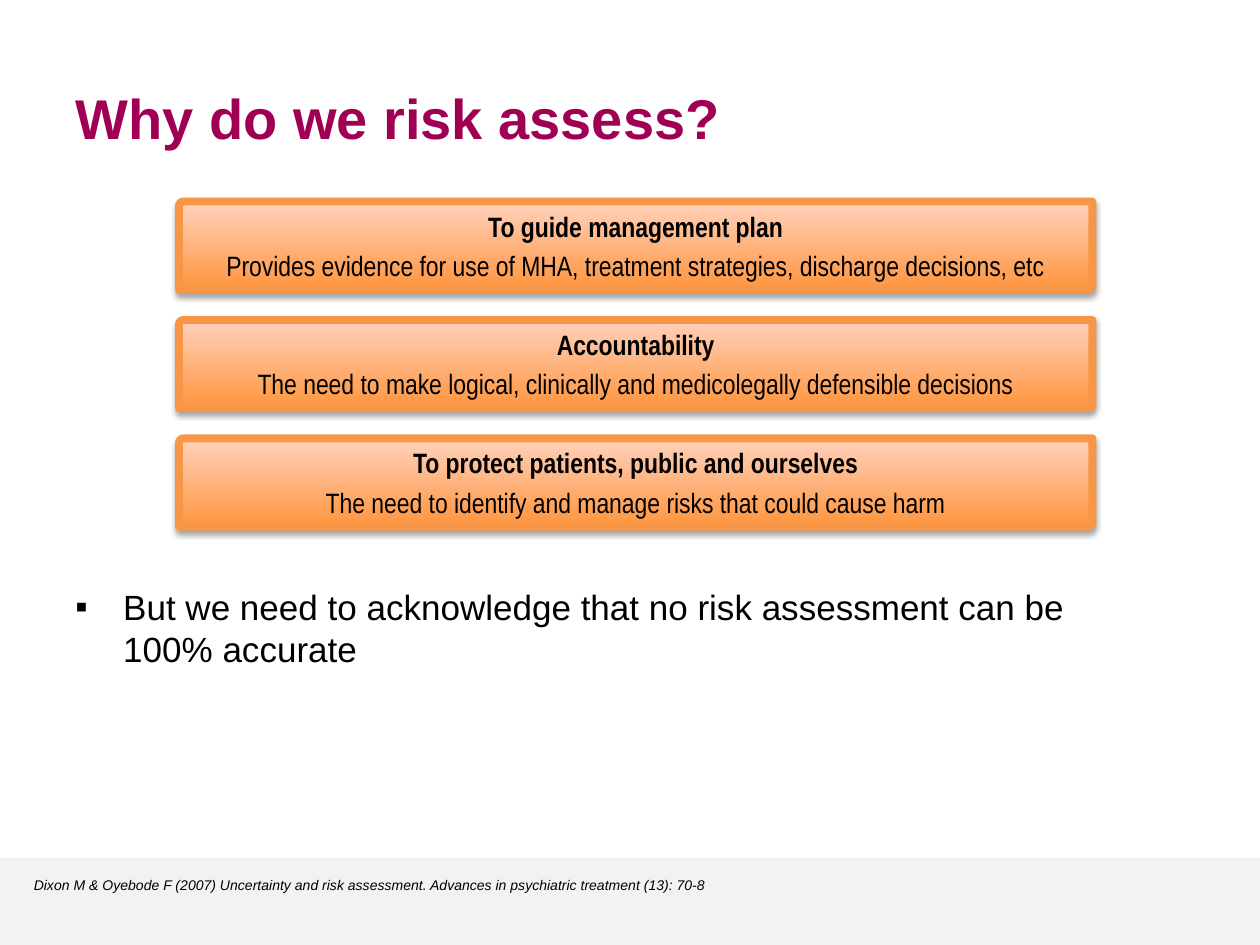
"""Build the slide on the reasons for risk assessment."""
from lxml import etree
from pptx import Presentation
from pptx.dml.color import RGBColor
from pptx.enum.shapes import MSO_SHAPE
from pptx.enum.text import MSO_ANCHOR, PP_ALIGN
from pptx.oxml import parse_xml
from pptx.oxml.ns import nsdecls, qn
from pptx.util import Inches, Pt

RECT, CARD = MSO_SHAPE.RECTANGLE, MSO_SHAPE.ROUND_2_DIAG_RECTANGLE
TOP = MSO_ANCHOR.TOP
LEFT, CENTER = PP_ALIGN.LEFT, PP_ALIGN.CENTER


def rgb(value):
    return RGBColor.from_string(value)


def write(p, text, color="000000", **fmt):
    r = p.add_run()
    r.text = text
    r.font.color.rgb = rgb(color)
    for name, value in fmt.items():
        setattr(r.font, name, value)


prs = Presentation()
prs.slide_width, prs.slide_height = Inches(10), Inches(7.5)
s = prs.slides.add_slide(prs.slide_layouts[5])

band = s.shapes.add_shape(RECT, 0, Inches(6.81), Inches(10), Inches(0.69))
band.shadow.inherit = False
band.fill.solid()
band.fill.fore_color.rgb = rgb("F2F2F2")
band.line.fill.background()

title = s.shapes.title
title.left, title.top = Inches(0.5), Inches(0.57)
title.width, title.height = Inches(8.5), Inches(0.74)
tf = title.text_frame
tf.vertical_anchor = TOP
tf.margin_top = Inches(0.09)
p = tf.paragraphs[0]
p.alignment = LEFT
write(p, "Why do we risk assess?", "A00054", name="Arial", size=Pt(32), bold=True)

reasons = [
    ("To guide management plan",
     "Provides evidence for use of MHA, treatment strategies, discharge decisions, etc"),
    ("Accountability",
     "The need to make logical, clinically and medicolegally defensible decisions"),
    ("To protect patients, public and ourselves",
     "The need to identify and manage risks that could cause harm"),
]
for i, (heading, detail) in enumerate(reasons):
    sp = s.shapes.add_shape(CARD, Inches(1.42), Inches(1.6 + 0.94 * i),
                            Inches(7.25), Inches(0.7))
    sp.adjustments[0], sp.adjustments[1] = 0.05, 0
    sp.fill.gradient()
    sp.fill.gradient_angle = 90
    for stop, position, color in zip(sp.fill.gradient_stops, (0, 1), ("FF953E", "FFD2BD")):
        stop.position = position
        stop.color.rgb = rgb(color)
    sp.line.color.rgb = rgb("F79646")
    sp.line.width = Pt(4.5)
    sp.shadow.inherit = False
    effects = sp._element.spPr.find(qn("a:effectLst"))
    effects.append(parse_xml(
        f'<a:outerShdw {nsdecls("a")} blurRad="{Pt(3.1)}" dist="{Pt(1.8)}" dir="5400000" '
        'rotWithShape="0"><a:srgbClr val="000000"><a:alpha val="35000"/></a:srgbClr>'
        '</a:outerShdw>'))
    tf = sp.text_frame
    tf.word_wrap = True
    tf.vertical_anchor = TOP
    p = tf.paragraphs[0]
    p.alignment = CENTER
    write(p, heading, name="Arial Narrow", size=Pt(16), bold=True)
    p = tf.add_paragraph()
    p.alignment = CENTER
    p.space_before = Pt(3.2)
    write(p, detail, name="Arial Narrow", size=Pt(16), bold=False)

tf = s.shapes.add_textbox(Inches(0.5), Inches(4.6), Inches(8.57), Inches(0.65)).text_frame
tf.word_wrap = True
p = tf.paragraphs[0]
pPr = p._p.get_or_add_pPr()
pPr.set("marL", str(Inches(0.38)))
pPr.set("indent", str(-Inches(0.38)))
etree.SubElement(pPr, qn("a:buFont")).set("typeface", "Arial")
etree.SubElement(pPr, qn("a:buChar")).set("char", "▪")
write(p, "But we need to acknowledge that no risk assessment can be 100% accurate",
      name="Arial", size=Pt(20))

tf = s.shapes.add_textbox(Inches(0.17), Inches(6.91), Inches(8.36), Inches(0.24)).text_frame
tf.word_wrap = True
write(tf.paragraphs[0],
      "Dixon M & Oyebode F (2007) Uncertainty and risk assessment. "
      "Advances in psychiatric treatment (13): 70-8",
      name="Arial", size=Pt(8), italic=True)

prs.save("out.pptx")
